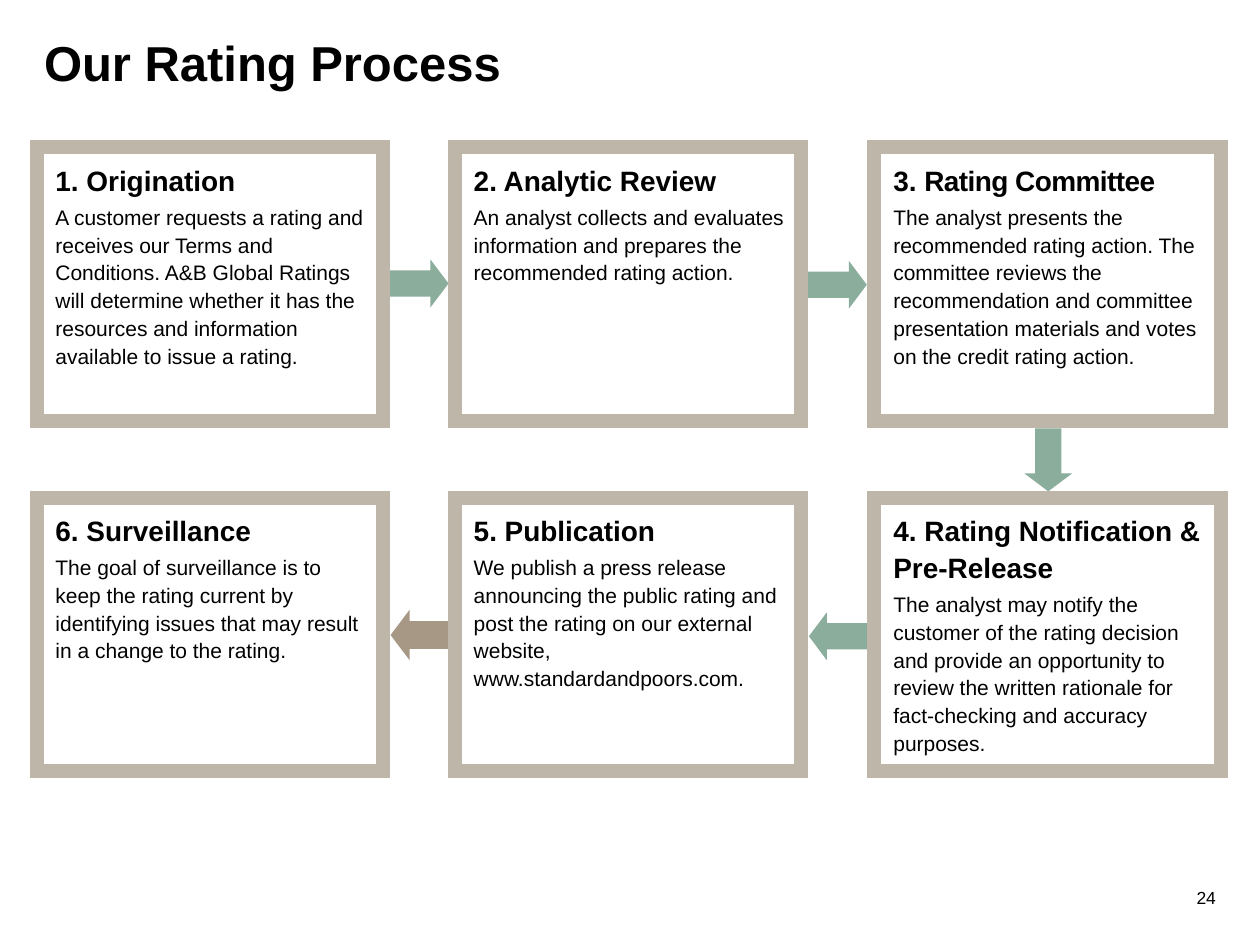
from dataclasses import dataclass

import pptx
import pptx.dml.color
import pptx.enum.shapes
import pptx.enum.text
import pptx.oxml.ns
import pptx.util
from lxml import etree

Inches = pptx.util.Inches
Pt = pptx.util.Pt
RGB = pptx.dml.color.RGBColor.from_string
Shape = pptx.enum.shapes.MSO_SHAPE
Anchor = pptx.enum.text.MSO_ANCHOR
Align = pptx.enum.text.PP_ALIGN


@dataclass(frozen=True)
class Theme:
    font: str = "Arial"
    ink: str = "000000"
    paper: str = "FFFFFF"
    frame: str = "BEB7A9"
    green: str = "8AAD9C"
    brown: str = "A79886"
    title_size: int = 28
    heading_size: int = 16
    body_size: int = 12
    page_size: int = 10
    frame_width: int = 8


THEME = Theme()
COLUMNS = (0.29, 3.61, 6.94)
ROWS = (1.17, 3.95)
STEP_SIZE = (2.75, 2.17)

# column, row, heading, body, letter spacing of the heading's name
STEPS = (
    (0, 0, "1. ", "Origination",
     "A customer requests a rating and receives our Terms and Conditions. "
     "A&B Global Ratings will determine whether it has the resources and "
     "information available to issue a rating.", 0),
    (1, 0, "2. ", "Analytic Review",
     "An analyst collects and evaluates information and prepares the "
     "recommended rating action.", 0),
    (2, 0, "3. ", "Rating Committee",
     "The analyst presents the recommended rating action. The committee "
     "reviews the recommendation and committee presentation materials and "
     "votes on the credit rating action.", -30),
    (2, 1, "4. ", "Rating Notification & Pre-Release",
     "The analyst may notify the customer of the rating decision and provide "
     "an opportunity to review the written rationale for fact-checking and "
     "accuracy purposes.", 0),
    (1, 1, "5. ", "Publication",
     "We publish a press release announcing the public rating and post the "
     "rating on our external website, www.standardandpoors.com.", 0),
    (0, 1, "6. ", "Surveillance",
     "The goal of surveillance is to keep the rating current by identifying "
     "issues that may result in a change to the rating.", 0),
)

ARROWS = (
    (Shape.RIGHT_ARROW, 3.06, 2.06, 0.5, 0.38, THEME.green),
    (Shape.RIGHT_ARROW, 6.38, 2.07, 0.5, 0.38, THEME.green),
    (Shape.DOWN_ARROW, 8.13, 3.4, 0.38, 0.5, THEME.green),
    (Shape.LEFT_ARROW, 6.42, 4.86, 0.5, 0.38, THEME.green),
    (Shape.LEFT_ARROW, 3.1, 4.84, 0.48, 0.4, THEME.brown),
)


def apply(target, formats):
    for name, value in formats.items():
        setattr(target, name, value)


def set_frame(frame, left=0, top=0, right=0, bottom=0, anchor=Anchor.TOP):
    apply(frame, {
        "word_wrap": True, "vertical_anchor": anchor,
        "margin_left": Inches(left), "margin_top": Inches(top),
        "margin_right": Inches(right), "margin_bottom": Inches(bottom),
    })


def add_run(paragraph, text, size, bold=False):
    run = paragraph.add_run()
    run.text = text
    apply(run.font, {"name": THEME.font, "size": Pt(size), "bold": bold})
    run.font.color.rgb = RGB(THEME.ink)
    return run


def add_label(slide, text, box, size, bold=False, align=Align.LEFT, anchor=Anchor.TOP):
    frame = slide.shapes.add_textbox(*map(Inches, box)).text_frame
    set_frame(frame, anchor=anchor)
    frame.paragraphs[0].alignment = align
    add_run(frame.paragraphs[0], text, size, bold)


def add_filled_shape(slide, kind, box, color):
    shape = slide.shapes.add_shape(kind, *map(Inches, box))
    shape.shadow.inherit = False
    shape.fill.solid()
    shape.fill.fore_color.rgb = RGB(color)
    return shape


def add_arrow(slide, kind, left, top, width, height, color):
    arrow = add_filled_shape(slide, kind, (left, top, width, height), color)
    arrow.line.fill.background()
    arrow.adjustments[0] = 0.552
    arrow.adjustments[1] = 0.376


def frame_step(step):
    """Give the step box a thick outline with square corners."""
    step.line.color.rgb = RGB(THEME.frame)
    step.line.width = Pt(THEME.frame_width)
    outline = step.element.spPr.find(pptx.oxml.ns.qn("a:ln"))
    etree.SubElement(outline, pptx.oxml.ns.qn("a:miter"), lim="800000")


def add_step(slide, column, row, number, name, description, spacing):
    box = (COLUMNS[column], ROWS[row], *STEP_SIZE)
    step = add_filled_shape(slide, Shape.RECTANGLE, box, THEME.paper)
    frame_step(step)
    frame = step.text_frame
    set_frame(frame, left=0.15, top=0.1, right=0.1, bottom=0.15)

    heading, body = frame.paragraphs[0], frame.add_paragraph()
    for paragraph in (heading, body):
        apply(paragraph, {"alignment": Align.LEFT, "line_spacing": 1.1})
    body.space_before = Pt(3)
    add_run(heading, number, THEME.heading_size, bold=True)
    title = add_run(heading, name, THEME.heading_size, bold=True)
    if spacing:
        title._r.get_or_add_rPr().set("spc", str(spacing))
    add_run(body, description, THEME.body_size)


def main():
    deck = pptx.Presentation()
    apply(deck, {"slide_width": Inches(10), "slide_height": Inches(7.5)})
    slide = deck.slides.add_slide(deck.slide_layouts[6])

    for arrow in ARROWS:
        add_arrow(slide, *arrow)
    add_label(slide, "Our Rating Process", (0.35, 0.24, 9.5, 0.5),
              THEME.title_size, bold=True, anchor=Anchor.MIDDLE)
    for step in STEPS:
        add_step(slide, *step)
    add_label(slide, "24", (9.42, 7.04, 0.23, 0.28),
              THEME.page_size, align=Align.RIGHT)

    deck.save("out.pptx")


if __name__ == "__main__":
    main()
